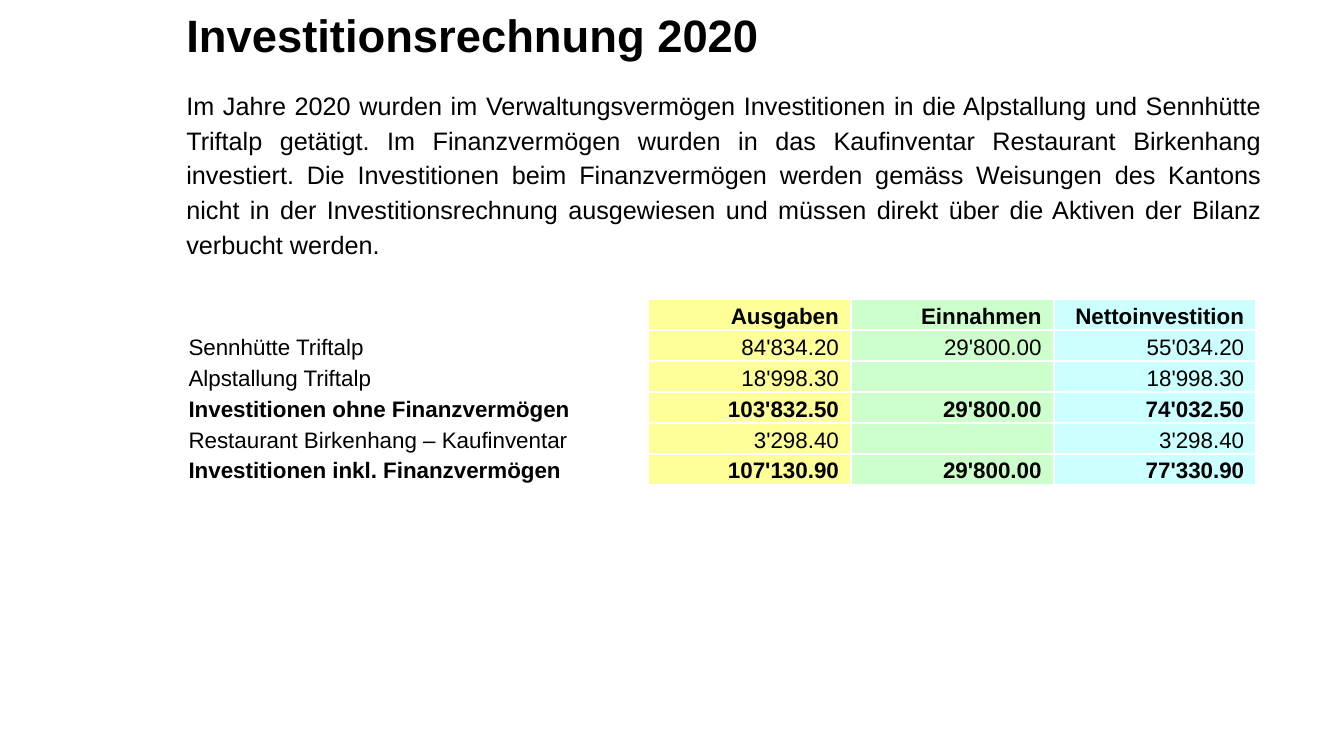
"""Build the slide on the 2020 investment account with its table of figures."""
from dataclasses import dataclass

from lxml.etree import SubElement
from pptx import Presentation
from pptx.dml.color import RGBColor
from pptx.enum.text import MSO_ANCHOR as Anchor, PP_ALIGN as Align
from pptx.oxml.ns import qn
from pptx.slide import Slide
from pptx.table import _Cell as Cell
from pptx.text.text import TextFrame
from pptx.util import Inches, Pt

COLORS = {
    "text": "000000",
    "border": "FFFFFF",
    "expenses": "FFFF99",
    "income": "CCFFCC",
    "net": "CCFFFF",
}
FONT = "Arial"
LEFT = 1.75
ROW_HEIGHT = 0.3
TITLE = "Investitionsrechnung 2020"
EXPLANATION = (
    "Im Jahre 2020 wurden im Verwaltungsvermögen Investitionen in die Alpstallung "
    "und Sennhütte Triftalp getätigt. Im Finanzvermögen wurden in das Kaufinventar "
    "Restaurant Birkenhang investiert. Die Investitionen beim Finanzvermögen werden "
    "gemäss Weisungen des Kantons nicht in der Investitionsrechnung ausgewiesen und "
    "müssen direkt über die Aktiven der Bilanz verbucht werden."
)


@dataclass(frozen=True)
class Column:
    width: float
    align: Align
    color: str | None = None


@dataclass(frozen=True)
class Entry:
    texts: tuple[str, str, str, str]
    bold: bool = False


COLUMNS = [
    Column(4.68, Align.LEFT),
    Column(2.01, Align.RIGHT, "expenses"),
    Column(2.01, Align.RIGHT, "income"),
    Column(2.01, Align.RIGHT, "net"),
]
ENTRIES = [
    Entry(("", "Ausgaben", "Einnahmen", "Nettoinvestition"), bold=True),
    Entry(("Sennhütte Triftalp", "84'834.20", "29'800.00", "55'034.20")),
    Entry(("Alpstallung Triftalp", "18'998.30", "", "18'998.30")),
    Entry(("Investitionen ohne Finanzvermögen", "103'832.50", "29'800.00", "74'032.50"), bold=True),
    Entry(("Restaurant Birkenhang – Kaufinventar", "3'298.40", "", "3'298.40")),
    Entry(("Investitionen inkl. Finanzvermögen", "107'130.90", "29'800.00", "77'330.90"), bold=True),
]


def write(frame: TextFrame, text: str, *, size: float, bold: bool = False,
          align: Align = Align.LEFT, spacing: float = 1.15, after: float = 10) -> None:
    paragraph = frame.paragraphs[0]
    paragraph.alignment = align
    paragraph.line_spacing = spacing
    paragraph.space_after = Pt(after)
    if not text:
        SubElement(paragraph._p, qn("a:endParaRPr"), sz=str(int(size * 100)))
        return
    run = paragraph.add_run()
    run.text = text
    run.font.name = FONT
    run.font.size = Pt(size)
    run.font.bold = bold
    run.font.color.rgb = RGBColor.from_string(COLORS["text"])


def add_text_frame(slide: Slide, top: float, width: float, height: float,
                   anchor: Anchor) -> TextFrame:
    box = slide.shapes.add_textbox(Inches(LEFT), Inches(top), Inches(width), Inches(height))
    box.text_frame.word_wrap = True
    box.text_frame.vertical_anchor = anchor
    return box.text_frame


def add_borders(cell: Cell) -> None:
    properties = cell._tc.get_or_add_tcPr()
    for index, side in enumerate(("lnL", "lnR", "lnT", "lnB")):
        line = SubElement(properties, qn(f"a:{side}"), w=str(Pt(1.5)))
        fill = SubElement(line, qn("a:solidFill"))
        SubElement(fill, qn("a:srgbClr"), val=COLORS["border"])
        properties.insert(index, line)


def fill_cell(cell: Cell, text: str, column: Column, bold: bool) -> None:
    cell.margin_left = cell.margin_right = Inches(0.12)
    cell.margin_top = cell.margin_bottom = 0
    cell.vertical_anchor = Anchor.MIDDLE
    if column.color:
        cell.fill.solid()
        cell.fill.fore_color.rgb = RGBColor.from_string(COLORS[column.color])
    else:
        cell.fill.background()
    add_borders(cell)
    write(cell.text_frame, text, size=16, bold=bold, align=column.align)


def add_investment_table(slide: Slide) -> None:
    width = sum(column.width for column in COLUMNS)
    table = slide.shapes.add_table(
        len(ENTRIES), len(COLUMNS), Inches(LEFT), Inches(2.97),
        Inches(width), Inches(ROW_HEIGHT * len(ENTRIES)),
    ).table
    table.first_row = table.horz_banding = False
    for index, column in enumerate(COLUMNS):
        table.columns[index].width = Inches(column.width)
    for row, entry in enumerate(ENTRIES):
        for index, (text, column) in enumerate(zip(entry.texts, COLUMNS)):
            fill_cell(table.cell(row, index), text, column, entry.bold)


def main() -> None:
    presentation = Presentation()
    presentation.slide_width = Inches(13.33)
    presentation.slide_height = Inches(7.5)
    slide = presentation.slides.add_slide(presentation.slide_layouts[6])
    title = add_text_frame(slide, 0.08, 11.14, 0.59, Anchor.MIDDLE)
    write(title, TITLE, size=32.4, bold=True, spacing=0.9, after=0)
    explanation = add_text_frame(slide, 0.8, 10.86, 1.82, Anchor.TOP)
    write(explanation, EXPLANATION, size=18, align=Align.JUSTIFY)
    add_investment_table(slide)
    presentation.save("out.pptx")


if __name__ == "__main__":
    main()
